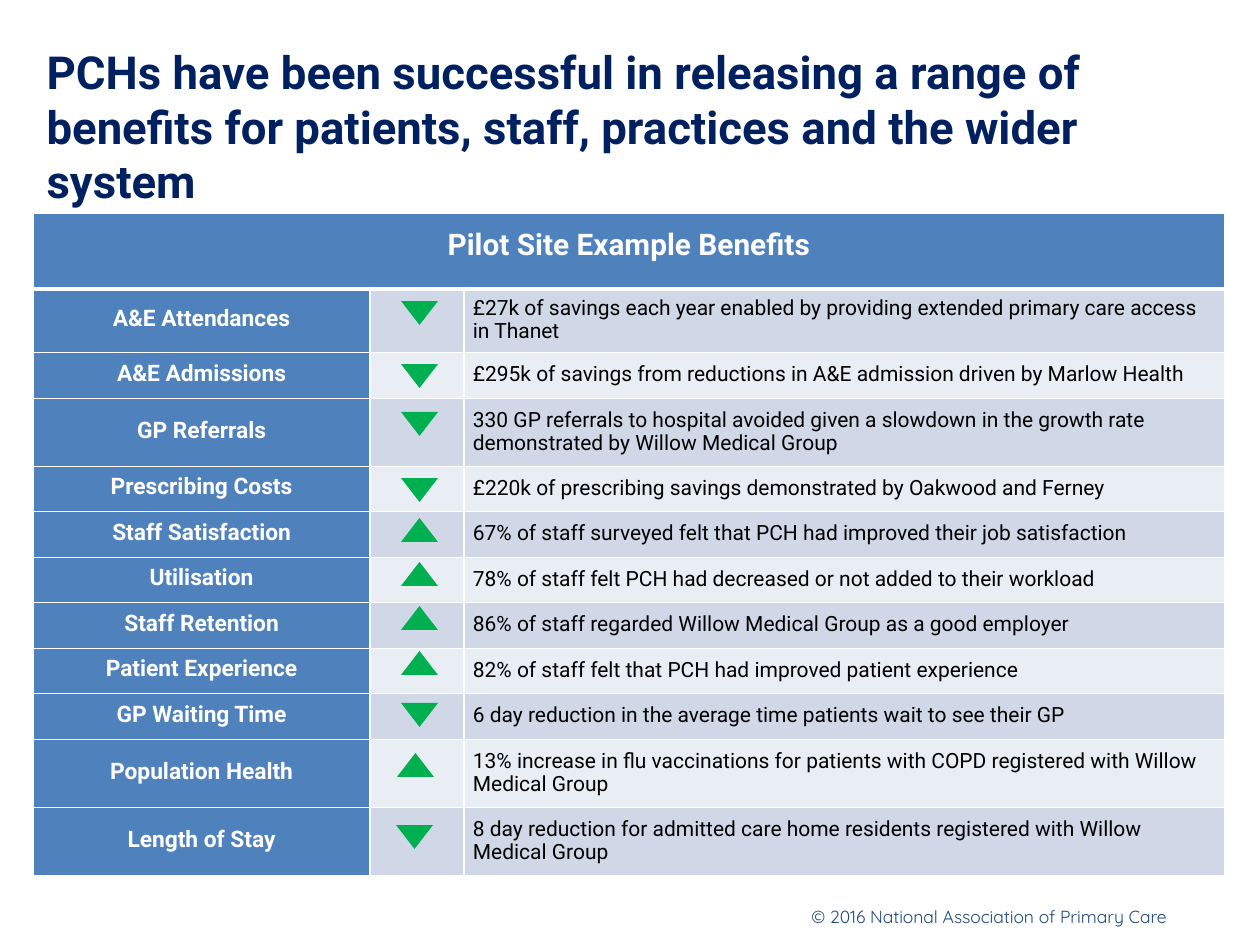
from lxml.etree import SubElement
from pptx import Presentation
from pptx.dml.color import RGBColor
from pptx.enum.shapes import MSO_SHAPE
from pptx.enum.text import MSO_ANCHOR, PP_ALIGN
from pptx.oxml.ns import qn
from pptx.util import Emu, Pt

WHITE = RGBColor(0xFF, 0xFF, 0xFF)
BLACK = RGBColor(0x00, 0x00, 0x00)
NAVY = RGBColor(0x00, 0x20, 0x60)
FOOTER_BLUE = RGBColor(0x1F, 0x49, 0x7D)
LABEL_BLUE = RGBColor(0x4F, 0x81, 0xBD)
BAND_DARK = RGBColor(0xD0, 0xD8, 0xE8)
BAND_LIGHT = RGBColor(0xE9, 0xED, 0xF4)
GREEN = RGBColor(0x00, 0xB0, 0x50)

COLUMN_WIDTHS = (337, 94, 761)
HEADER_HEIGHT = 76
LINE_PITCH = Pt(13)

BENEFITS = [
    ("A&E Attendances", 63, "down", 401, 301,
     "£27k of savings each year enabled by providing extended primary care access in Thanet"),
    ("A&E Admissions", 46, "down", 401, 364,
     "£295k of savings from reductions in A&E admission driven by Marlow Health"),
    ("GP Referrals", 68, "down", 401, 412,
     "330 GP referrals to hospital avoided given a slowdown in the growth rate "
     "demonstrated by Willow Medical Group"),
    ("Prescribing Costs", 45, "down", 401, 478,
     "£220k of prescribing savings demonstrated by Oakwood and Ferney"),
    ("Staff Satisfaction", 46, "up", 401, 518,
     "67% of staff surveyed felt that PCH had improved their job satisfaction"),
    ("Utilisation", 45, "up", 401, 562,
     "78% of staff felt PCH had decreased or not added to their workload"),
    ("Staff Retention", 46, "up", 401, 606,
     "86% of staff regarded Willow Medical Group as a good employer"),
    ("Patient Experience", 45, "up", 401, 651,
     "82% of staff felt that PCH had improved patient experience"),
    ("GP Waiting Time", 46, "down", 401, 703,
     "6 day reduction in the average time patients wait to see their GP"),
    ("Population Health", 68, "up", 397, 753,
     "13% increase in flu vaccinations for patients with COPD registered with "
     "Willow Medical Group"),
    ("Length of Stay", 68, "down", 396, 825,
     "8 day reduction for admitted care home residents registered with Willow Medical Group"),
]


def px(length):
    return Emu(round(length * 914400 / 126))


def write(frame, text, size, color, font="Roboto", bold=False,
          align=PP_ALIGN.LEFT, line_spacing=None):
    paragraph = frame.paragraphs[0]
    paragraph.alignment = align
    if line_spacing:
        paragraph.line_spacing = line_spacing
    run = paragraph.add_run()
    run.text = text
    run.font.name = font
    run.font.size = Pt(size)
    run.font.bold = bold
    run.font.color.rgb = color


def add_title(slide):
    title = slide.shapes.title
    title.left, title.top, title.width, title.height = px(34), px(30), px(1194), px(192)
    title.text_frame.vertical_anchor = MSO_ANCHOR.MIDDLE
    write(title.text_frame,
          "PCHs have been successful in releasing a range of benefits for patients, "
          "staff, practices and the wider system", 26, NAVY, bold=True)


def add_borders(cell, top=1, bottom=1):
    properties = cell._tc.get_or_add_tcPr()
    for side, width in (("L", 1), ("R", 1), ("T", top), ("B", bottom)):
        border = SubElement(properties, qn(f"a:ln{side}"), w=str(Pt(width)))
        fill = SubElement(border, qn("a:solidFill"))
        SubElement(fill, qn("a:srgbClr"), val=str(WHITE))


def fill_cell(cell, color):
    cell.fill.solid()
    cell.fill.fore_color.rgb = color


def format_trend_cell(cell, color):
    fill_cell(cell, color)
    SubElement(cell.text_frame.paragraphs[0]._p, qn("a:endParaRPr"), sz="1200")


def format_text_cell(cell, text, fill, size, color, **text_format):
    cell.margin_left = cell.margin_right = px(9)
    cell.margin_top = cell.margin_bottom = px(9)
    cell.vertical_anchor = MSO_ANCHOR.MIDDLE
    fill_cell(cell, fill)
    write(cell.text_frame, text, size, color, line_spacing=LINE_PITCH, **text_format)


def add_benefits_table(slide):
    heights = [HEADER_HEIGHT] + [benefit[1] for benefit in BENEFITS]
    table = slide.shapes.add_table(
        len(heights), len(COLUMN_WIDTHS), px(33), px(213),
        px(sum(COLUMN_WIDTHS)), px(sum(heights))).table
    for column, width in zip(table.columns, COLUMN_WIDTHS):
        column.width = px(width)
    for index, (row, height) in enumerate(zip(table.rows, heights)):
        row.height = px(height)
        for cell in row.cells:
            add_borders(cell, top=3 if index == 1 else 1, bottom=3 if index == 0 else 1)

    header = table.cell(0, 0)
    header.merge(table.cell(0, 2))
    heading = {"bold": True, "align": PP_ALIGN.CENTER}
    format_text_cell(header, "Pilot Site Example Benefits", LABEL_BLUE, 17, WHITE, **heading)
    for row, (label, _, _, _, _, benefit) in enumerate(BENEFITS, 1):
        band = BAND_DARK if row % 2 else BAND_LIGHT
        format_text_cell(table.cell(row, 0), label, LABEL_BLUE, 13, WHITE, **heading)
        format_trend_cell(table.cell(row, 1), band)
        format_text_cell(table.cell(row, 2), benefit, band, 12, BLACK)


def add_trend(slide, direction, left, top):
    trend = slide.shapes.add_shape(
        MSO_SHAPE.ISOSCELES_TRIANGLE, px(left), px(top), px(37), px(24))
    trend.shadow.inherit = False
    trend.fill.solid()
    trend.fill.fore_color.rgb = GREEN
    trend.line.fill.background()
    if direction == "down":
        trend.rotation = 180


def add_copyright(slide):
    notice = slide.shapes.add_textbox(px(799), px(900), px(404), px(34))
    notice.text_frame.word_wrap = False
    write(notice.text_frame, "© 2016 National Association of Primary Care", 10,
          FOOTER_BLUE, font="Quicksand")


def main():
    deck = Presentation()
    deck.slide_width, deck.slide_height = px(1260), px(945)
    slide = deck.slides.add_slide(deck.slide_layouts[5])
    add_copyright(slide)
    add_title(slide)
    add_benefits_table(slide)
    for _, _, direction, left, top, _ in BENEFITS:
        add_trend(slide, direction, left, top)
    deck.save("out.pptx")


if __name__ == "__main__":
    main()
